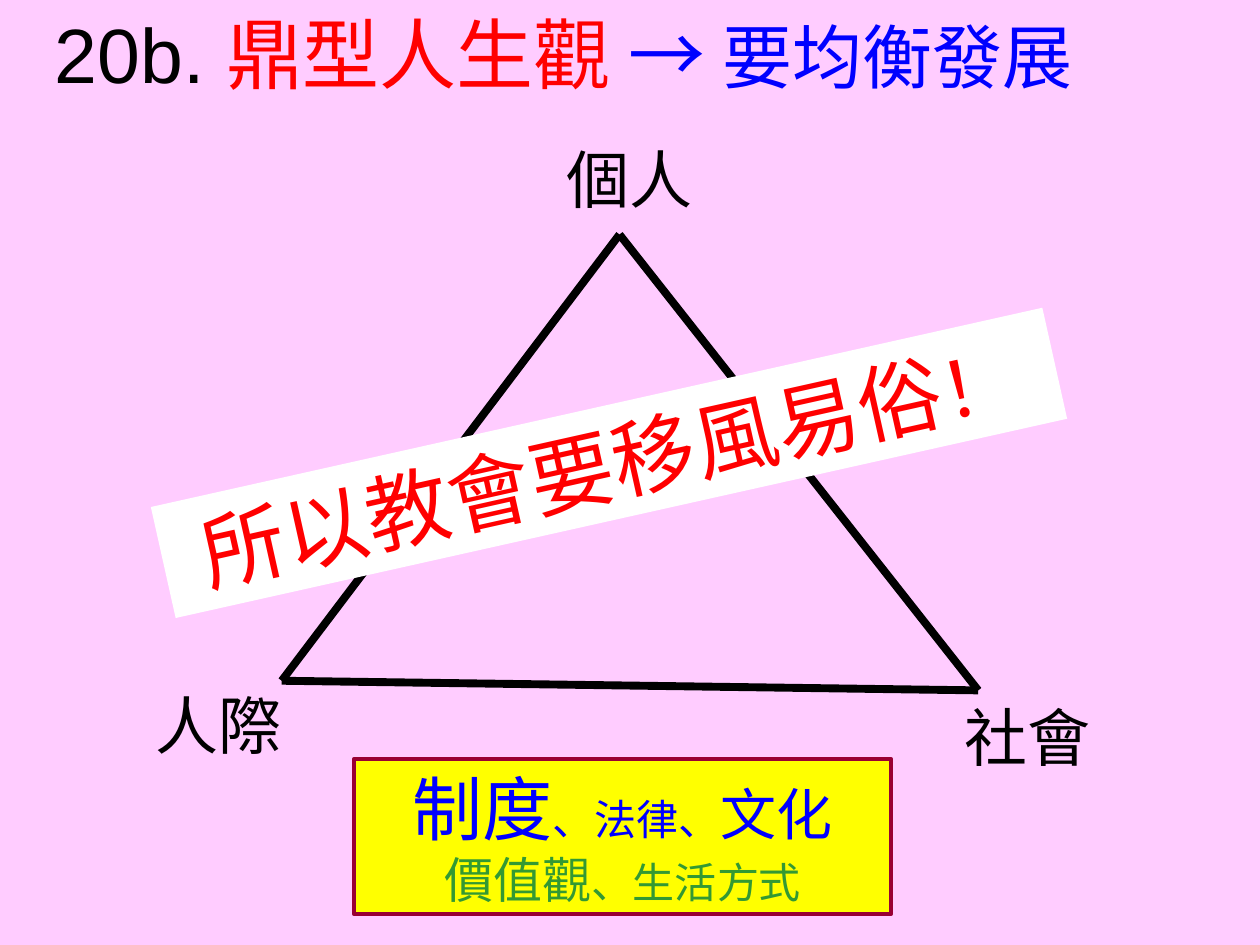
from itertools import combinations

from lxml.etree import SubElement
from pptx import Presentation
from pptx.dml.color import RGBColor
from pptx.enum.shapes import MSO_CONNECTOR, MSO_SHAPE
from pptx.enum.text import MSO_ANCHOR, PP_ALIGN
from pptx.oxml.ns import qn
from pptx.util import Pt

COLOURS = {
    "pink": "FFCCFF",
    "black": "000000",
    "red": "FF0000",
    "blue": "0000FF",
    "green": "339933",
    "white": "FFFFFF",
    "yellow": "FFFF00",
    "maroon": "990033",
}
CORNERS = [(354, 134), (161, 389), (559, 394.5)]
LABELS = [
    ("個人", (314.5, 77, 91, 50.5), PP_ALIGN.CENTER),
    ("人際", (82, 389, 102, 50.5), PP_ALIGN.LEFT),
    ("社會", (541.5, 395.5, 91, 50.5), PP_ALIGN.CENTER),
]
TITLE = [[("20b. ", 44, "black"), ("鼎型人生觀 ", 44, "red"),
          ("→ ", 44, "blue"), ("要均衡發展", 40, "blue")]]
BANNER = [[("所以教會要移風易俗", 48, "red"), ("！", 44, "red")]]
CULTURE = [
    [("制度", 40, "blue"), ("、法律、", 24, "blue"), ("文化", 32, "blue")],
    [("價值觀", 28, "green"), ("、生活方式", 24, "green")],
]


def colour(name):
    """Return the named colour."""
    return RGBColor.from_string(COLOURS[name])


def set_attributes(target, values):
    """Set each given attribute on the target."""
    for name, value in values.items():
        setattr(target, name, value)


def place(shape, bounds):
    """Move and size a shape in points."""
    names = ("left", "top", "width", "height")
    set_attributes(shape, dict(zip(names, map(Pt, bounds))))


def write(shape, paragraphs, align, anchor=MSO_ANCHOR.TOP, wrap=True):
    """Fill a shape with paragraphs of (text, size, colour) spans."""
    frame = shape.text_frame
    set_attributes(frame, {"word_wrap": wrap, "vertical_anchor": anchor})
    for index, spans in enumerate(paragraphs):
        para = frame.add_paragraph() if index else frame.paragraphs[0]
        para.alignment = align
        for text, size, shade in spans:
            span = para.add_run()
            span.text = text
            set_attributes(span.font, {"name": "Arial", "size": Pt(size)})
            span.font.color.rgb = colour(shade)


def add_label(page, text, bounds, align):
    """Add the name of a triangle corner."""
    box = page.shapes.add_textbox(*map(Pt, bounds))
    write(box, [[(text, 36, "black")]], align)


def add_side(page, start, end):
    """Add one side of the triangle."""
    side = page.shapes.add_connector(
        MSO_CONNECTOR.STRAIGHT, *map(Pt, (*start, *end)))
    side.line.width = Pt(4.5)
    side.line.color.rgb = colour("black")
    SubElement(side._element.spPr, qn("a:effectLst"))


def add_panel(page, bounds, fill, paragraphs, border=None, rotation=0):
    """Add a filled rectangle with centred text."""
    panel = page.shapes.add_shape(MSO_SHAPE.RECTANGLE, *map(Pt, bounds))
    panel.shadow.inherit = False
    panel.rotation = rotation
    panel.fill.solid()
    panel.fill.fore_color.rgb = colour(fill)
    if border:
        panel.line.color.rgb = colour(border)
        panel.line.width = Pt(2.25)
    else:
        panel.line.fill.background()
    write(panel, paragraphs, PP_ALIGN.CENTER, MSO_ANCHOR.MIDDLE)


def main():
    """Build the slide and save it."""
    deck = Presentation()
    set_attributes(deck, {"slide_width": Pt(720), "slide_height": Pt(540)})
    page = deck.slides.add_slide(deck.slide_layouts[5])
    page.background.fill.solid()
    page.background.fill.fore_color.rgb = colour("pink")
    place(page.shapes.title, (24, 0, 696, 64))
    write(page.shapes.title, TITLE, PP_ALIGN.LEFT)
    for start, end in combinations(CORNERS, 2):
        add_side(page, start, end)
    for label in LABELS:
        add_label(page, *label)
    add_panel(page, (87, 232, 522, 65), "white", BANNER, rotation=347.4)
    add_panel(page, (202.5, 433.5, 306.5, 89), "yellow", CULTURE, "maroon")
    deck.save("out.pptx")


if __name__ == "__main__":
    main()
